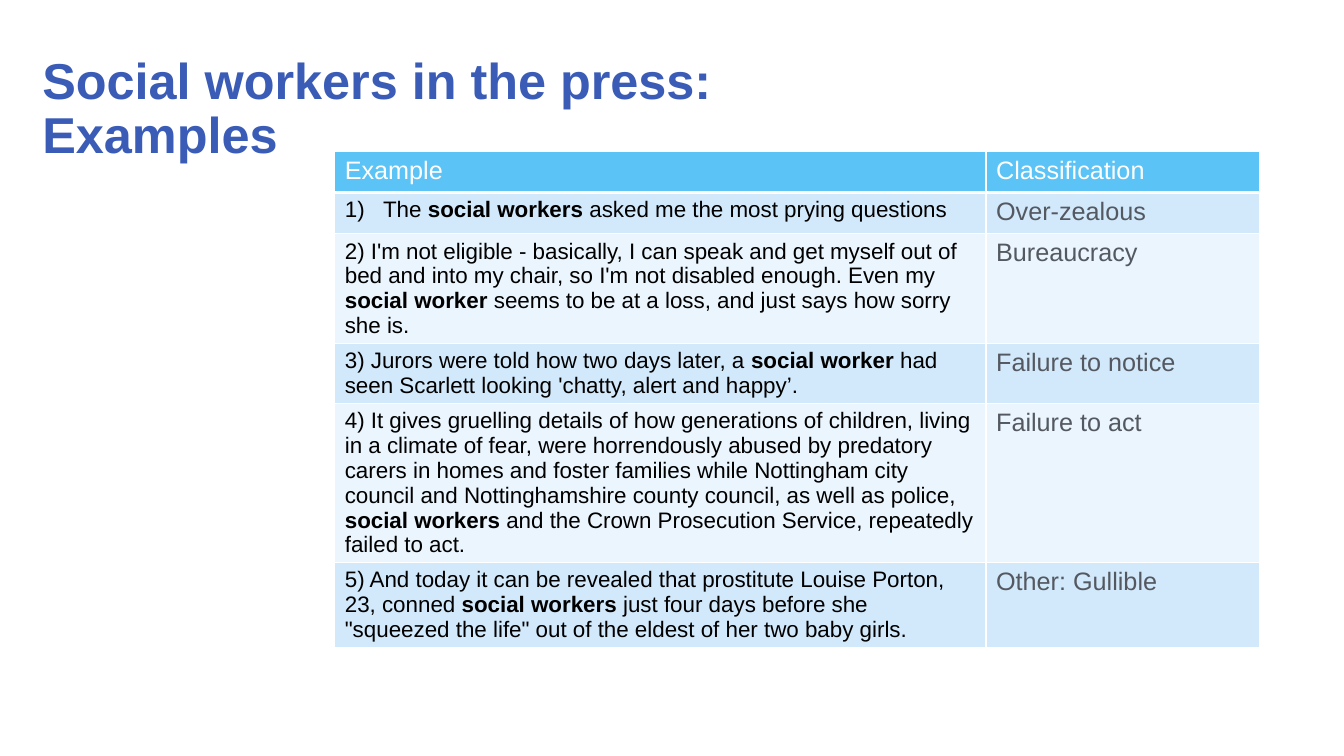
from dataclasses import dataclass

from lxml import etree
from pptx import Presentation
from pptx.dml.color import RGBColor
from pptx.enum.text import MSO_ANCHOR, MSO_AUTO_SIZE, PP_ALIGN
from pptx.oxml.ns import qn
from pptx.util import Inches, Pt

MIDDLE = MSO_ANCHOR.MIDDLE
NO_AUTOFIT = MSO_AUTO_SIZE.NONE
LEFT = PP_ALIGN.LEFT

FONT = "Arial"
TITLE_BLUE = RGBColor(0x3A, 0x5C, 0xB7)
HEADER_BLUE = RGBColor(0x5B, 0xC3, 0xF5)
BAND_DARK = RGBColor(0xD2, 0xE9, 0xFB)
BAND_LIGHT = RGBColor(0xEA, 0xF5, 0xFD)
WHITE = RGBColor(0xFF, 0xFF, 0xFF)
BLACK = RGBColor(0x00, 0x00, 0x00)
GREY = RGBColor(0x54, 0x58, 0x60)

BOLD_MARK = "**"
COLUMN_WIDTHS = (6.46, 2.71)
ROW_HEIGHT = 0.41


@dataclass(frozen=True)
class PressExample:
    quote: str
    classification: str
    numbered: bool = False


EXAMPLES = (
    PressExample(
        "The **social workers** asked me the most prying questions",
        "Over-zealous",
        numbered=True,
    ),
    PressExample(
        "2) I'm not eligible - basically, I can speak and get myself out of bed and into "
        "my chair, so I'm not disabled enough. Even my **social worker** seems to be at a "
        "loss, and just says how sorry she is.",
        "Bureaucracy",
    ),
    PressExample(
        "3) Jurors were told how two days later, a **social worker** had seen Scarlett "
        "looking 'chatty, alert and happy’.",
        "Failure to notice",
    ),
    PressExample(
        "4) It gives gruelling details of how generations of children, living in a climate "
        "of fear, were horrendously abused by predatory carers in homes and foster families "
        "while Nottingham city council and Nottinghamshire county council, as well as "
        "police, **social workers** and the Crown Prosecution Service, repeatedly failed "
        "to act.",
        "Failure to act",
    ),
    PressExample(
        "5) And today it can be revealed that prostitute Louise Porton, 23, conned "
        "**social workers** just four days before she \"squeezed the life\" out of the "
        "eldest of her two baby girls.",
        "Other: Gullible",
    ),
)


def write_text(paragraph, text: str, *, size: float, color: RGBColor, bold: bool = False) -> None:
    paragraph.alignment = LEFT
    for index, part in enumerate(text.split(BOLD_MARK)):
        run = paragraph.add_run()
        run.text = part
        run.font.name = FONT
        run.font.size = Pt(size)
        run.font.color.rgb = color
        run.font.bold = bold or index % 2 == 1


def number_paragraph(paragraph) -> None:
    properties = paragraph._p.get_or_add_pPr()
    properties.set("marL", str(Inches(0.38)))
    properties.set("indent", str(-Inches(0.38)))
    etree.SubElement(properties, qn("a:buFont"), typeface="+mj-lt")
    etree.SubElement(properties, qn("a:buAutoNum"), type="arabicParenR")


def format_cell(cell, fill: RGBColor, *, top: float = 1, bottom: float = 1) -> None:
    properties = cell._tc.get_or_add_tcPr()
    for side, width in (("L", 1), ("R", 1), ("T", top), ("B", bottom)):
        line = etree.SubElement(properties, qn(f"a:ln{side}"), w=str(Pt(width)))
        solid = etree.SubElement(line, qn("a:solidFill"))
        etree.SubElement(solid, qn("a:srgbClr"), val=str(WHITE))
    cell.fill.solid()
    cell.fill.fore_color.rgb = fill


def add_title(slide) -> None:
    title = slide.shapes.title
    title.left, title.top = Inches(0.32), Inches(0.33)
    title.width, title.height = Inches(9), Inches(1.53)
    frame = title.text_frame
    frame.word_wrap = True
    frame.auto_size = NO_AUTOFIT
    frame.vertical_anchor = MIDDLE
    paragraph = frame.paragraphs[0]
    paragraph.line_spacing = 0.9
    write_text(paragraph, "Social workers in the press: Examples",
               size=36, color=TITLE_BLUE, bold=True)


def add_examples_table(slide) -> None:
    row_count = len(EXAMPLES) + 1
    table = slide.shapes.add_table(
        row_count, len(COLUMN_WIDTHS), Inches(3.32), Inches(1.5),
        Inches(sum(COLUMN_WIDTHS)), Inches(ROW_HEIGHT * row_count),
    ).table
    for column, width in zip(table.columns, COLUMN_WIDTHS):
        column.width = Inches(width)

    for column_index, heading in enumerate(("Example", "Classification")):
        cell = table.cell(0, column_index)
        format_cell(cell, HEADER_BLUE, bottom=3)
        write_text(cell.text_frame.paragraphs[0], heading, size=18, color=WHITE)

    for row_index, example in enumerate(EXAMPLES, start=1):
        fill = BAND_DARK if row_index % 2 else BAND_LIGHT
        quote_cell, class_cell = table.cell(row_index, 0), table.cell(row_index, 1)
        for cell in (quote_cell, class_cell):
            format_cell(cell, fill, top=3 if row_index == 1 else 1)
        quote = quote_cell.text_frame.paragraphs[0]
        if example.numbered:
            number_paragraph(quote)
        write_text(quote, example.quote, size=16, color=BLACK)
        write_text(class_cell.text_frame.paragraphs[0], example.classification,
                   size=18, color=GREY)


def main() -> None:
    presentation = Presentation()
    presentation.slide_width = Inches(13.33)
    presentation.slide_height = Inches(7.5)
    slide = presentation.slides.add_slide(presentation.slide_layouts[5])
    add_title(slide)
    add_examples_table(slide)
    presentation.save("out.pptx")


if __name__ == "__main__":
    main()
